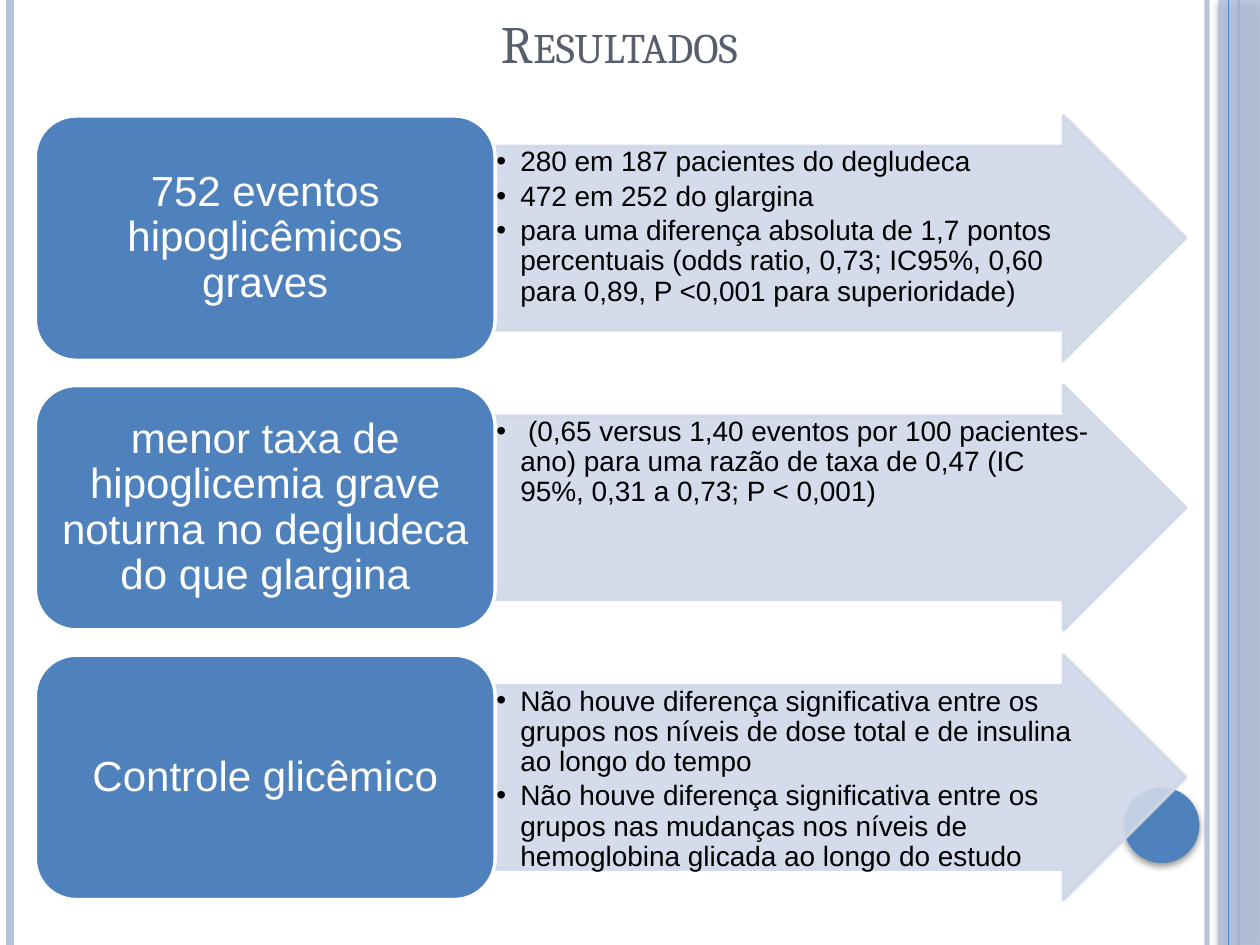
from dataclasses import dataclass

from lxml.etree import SubElement
from pptx import Presentation
from pptx.dml.color import RGBColor
from pptx.enum.shapes import MSO_CONNECTOR, MSO_SHAPE
from pptx.enum.text import MSO_ANCHOR, PP_ALIGN
from pptx.oxml.ns import qn
from pptx.util import Emu, Inches, Pt

BLUE = RGBColor(0x4F, 0x81, 0xBD)
PALE_BLUE = RGBColor(0xB3, 0xC1, 0xDB)
ARROW_BLUE = RGBColor(0xD0, 0xD8, 0xE8)
TITLE_GRAY = RGBColor(0x57, 0x5F, 0x6D)
BLACK = RGBColor(0, 0, 0)
WHITE = RGBColor(0xFF, 0xFF, 0xFF)

LABEL_LEFT, LABEL_WIDTH = 0.28, 3.65
ARROW_LEFT, ARROW_WIDTH = LABEL_LEFT + LABEL_WIDTH, 5.48
ROW_TOP, ROW_HEIGHT, ROW_STEP = 0.92, 1.94, 2.14
BULLET_INDENT = 0.19


@dataclass
class Rule:
    left: float
    width: float
    color: RGBColor
    opacity: int = 100


@dataclass
class Result:
    label: str
    findings: list[str]


LEFT_RULES = [Rule(9.58, 3, PALE_BLUE, 93), Rule(0.08, 4.5, PALE_BLUE), Rule(9.83, 1.5, BLUE)]
BAND_RULE = Rule(9.75, 0.75, BLUE)

RESULTS = [
    Result("752 eventos hipoglicêmicos graves", [
        "280 em 187 pacientes do degludeca",
        "472 em 252 do glargina",
        "para uma diferença absoluta de 1,7 pontos percentuais (odds ratio, 0,73; "
        "IC95%, 0,60 para 0,89, P <0,001 para superioridade)",
    ]),
    Result("menor taxa de hipoglicemia grave noturna no degludeca do que glargina", [
        " (0,65 versus 1,40 eventos por 100 pacientes-ano) para uma razão de taxa "
        "de 0,47 (IC 95%, 0,31 a 0,73; P < 0,001)",
    ]),
    Result("Controle glicêmico", [
        "Não houve diferença significativa entre os grupos nos níveis de dose total "
        "e de insulina ao longo do tempo",
        "Não houve diferença significativa entre os grupos nas mudanças nos níveis "
        "de hemoglobina glicada ao longo do estudo",
    ]),
]


def set_opacity(element, percent: int) -> None:
    if percent < 100:
        for color in element.iter(qn("a:srgbClr")):
            SubElement(color, qn("a:alpha"), val=str(percent * 1000))


def add_rule(slide, rule: Rule) -> None:
    line = slide.shapes.add_connector(
        MSO_CONNECTOR.STRAIGHT, Inches(rule.left), 0, Inches(rule.left), Inches(7.5))
    line.line.color.rgb = rule.color
    line.line.width = Pt(rule.width)
    properties = line._element.spPr
    set_opacity(properties, rule.opacity)
    SubElement(properties, qn("a:effectLst"))


def add_box(slide, kind: MSO_SHAPE, left: float, top: float, width: float, height: float,
            fill: RGBColor, border: RGBColor | None = None, opacity: int = 100):
    box = slide.shapes.add_shape(kind, Inches(left), Inches(top), Inches(width), Inches(height))
    box.shadow.inherit = False
    box.fill.solid()
    box.fill.fore_color.rgb = fill
    if border is None:
        box.line.fill.background()
    else:
        box.line.color.rgb = border
        box.line.width = Pt(2)
    set_opacity(box._element.spPr, opacity)
    return box


def add_shadow(box) -> None:
    effects = box._element.spPr.find(qn("a:effectLst"))
    shadow = SubElement(effects, qn("a:outerShdw"), blurRad=str(Pt(4)), dist=str(Pt(2)),
                        dir="5400000", algn="ctr", rotWithShape="0")
    SubElement(SubElement(shadow, qn("a:srgbClr"), val="000000"), qn("a:alpha"), val="40000")


def write_text(frame, paragraphs: list[str], *, size: float, color: RGBColor,
               font: str = "Arial", align: PP_ALIGN = PP_ALIGN.CENTER,
               anchor: MSO_ANCHOR = MSO_ANCHOR.MIDDLE, space_after: float = 0,
               margins: tuple[float, float, float, float] = (0, 0, 0, 0),
               bullets: bool = False, small_caps: bool = False) -> None:
    frame.word_wrap = True
    frame.vertical_anchor = anchor
    frame.margin_left, frame.margin_top, frame.margin_right, frame.margin_bottom = map(
        Inches, margins)
    for index, text in enumerate(paragraphs):
        para = frame.add_paragraph() if index else frame.paragraphs[0]
        para.alignment = align
        para.line_spacing = 0.9
        para.space_before = Pt(0)
        para.space_after = Pt(space_after)
        span = para.add_run()
        span.text = text
        span.font.name = font
        span.font.size = Pt(size)
        span.font.color.rgb = color
        if small_caps:
            span.font._element.set("cap", "small")
        if bullets:
            properties = para._p.get_or_add_pPr()
            properties.set("marL", str(Inches(BULLET_INDENT)))
            properties.set("indent", str(Emu(-Inches(BULLET_INDENT))))
            SubElement(properties, qn("a:buFont"), typeface="Arial")
            SubElement(properties, qn("a:buChar"), char="•")


def add_result(slide, result: Result, top: float) -> None:
    arrow = add_box(slide, MSO_SHAPE.RIGHT_ARROW, ARROW_LEFT, top, ARROW_WIDTH, ROW_HEIGHT,
                    ARROW_BLUE, ARROW_BLUE, 90)
    arrow.adjustments[0] = 0.75
    arrow.adjustments[1] = 0.5
    write_text(arrow.text_frame, result.findings, size=16, color=BLACK, align=PP_ALIGN.LEFT,
               anchor=MSO_ANCHOR.TOP, space_after=2.4, margins=(0.01, 0.01, 0.01, 0.01),
               bullets=True)
    label = add_box(slide, MSO_SHAPE.ROUNDED_RECTANGLE, LABEL_LEFT, top, LABEL_WIDTH, ROW_HEIGHT,
                    BLUE, WHITE)
    write_text(label.text_frame, [result.label], size=24, color=WHITE,
               margins=(0.1, 0.05, 0.1, 0.05))


def main() -> None:
    deck = Presentation()
    deck.slide_width, deck.slide_height = Inches(10), Inches(7.5)
    page = deck.slides.add_slide(deck.slide_layouts[5])

    for rule in LEFT_RULES:
        add_rule(page, rule)
    add_shadow(add_box(page, MSO_SHAPE.RECTANGLE, 9.67, 0, 0.33, 7.5, PALE_BLUE, opacity=87))
    add_rule(page, BAND_RULE)
    add_shadow(add_box(page, MSO_SHAPE.OVAL, 8.92, 6.25, 0.6, 0.6, BLUE))

    title = page.shapes.title
    title.left, title.top, title.width, title.height = map(Inches, (0.83, 0.05, 8.17, 0.64))
    write_text(title.text_frame, ["Resultados"], size=30, color=TITLE_GRAY, font="Cambria",
               small_caps=True)

    for row, result in enumerate(RESULTS):
        add_result(page, result, ROW_TOP + row * ROW_STEP)

    deck.save("out.pptx")


if __name__ == "__main__":
    main()
